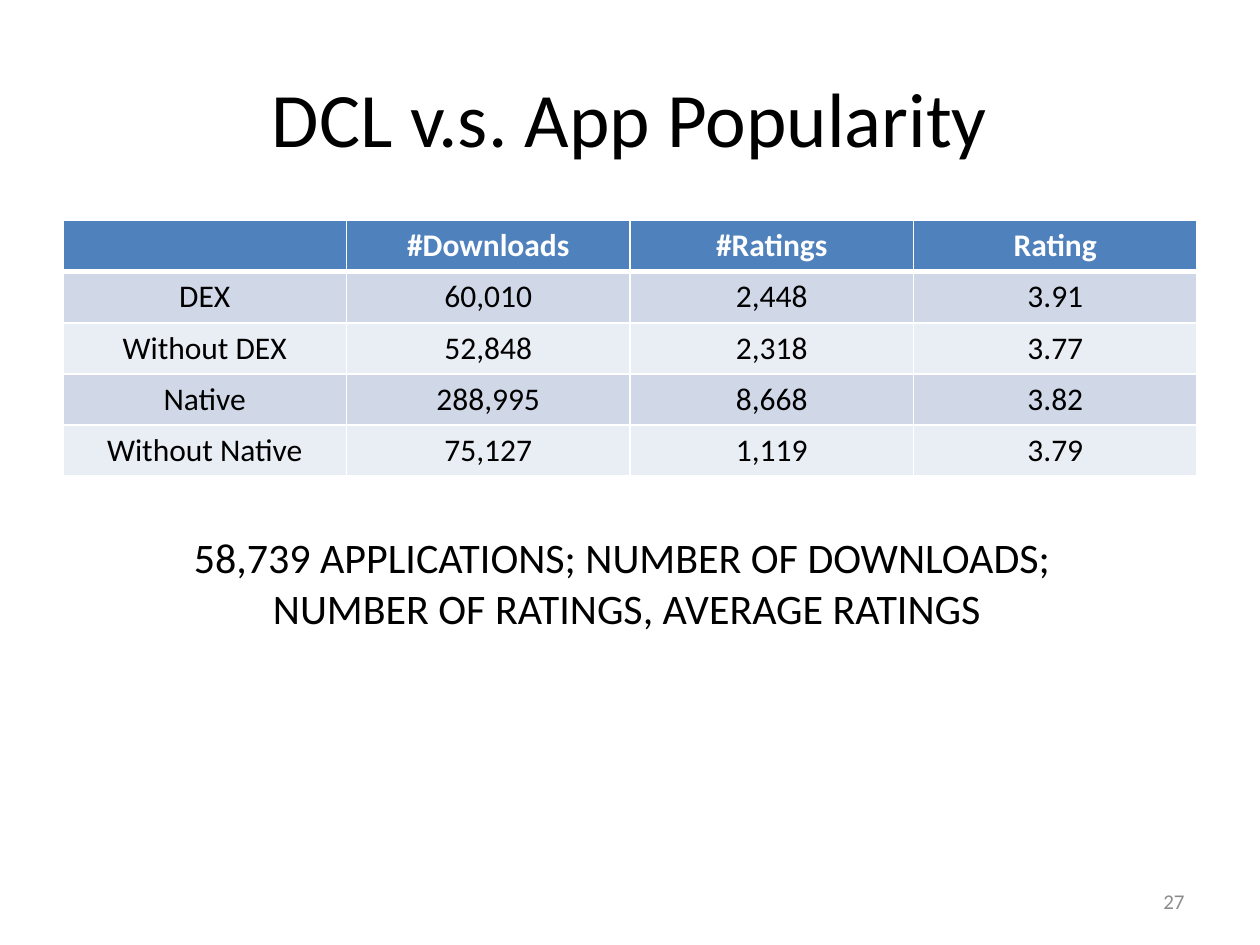
from dataclasses import dataclass

from lxml import etree
from pptx import Presentation
from pptx.dml.color import RGBColor
from pptx.enum.text import MSO_ANCHOR, PP_ALIGN
from pptx.oxml.ns import qn
from pptx.util import Inches, Pt

CENTER, RIGHT = PP_ALIGN.CENTER, PP_ALIGN.RIGHT
TOP, MIDDLE = MSO_ANCHOR.TOP, MSO_ANCHOR.MIDDLE
TITLE_ONLY = 5


@dataclass(frozen=True)
class Theme:
    font: str = "Calibri"
    text: str = "000000"
    white: str = "FFFFFF"
    muted: str = "8C8C8C"
    header: str = "4F81BD"
    bands: tuple = ("D0D8E8", "E9EDF4")
    title_size: int = 44
    note_size: int = 24
    table_size: int = 18
    number_size: int = 12
    border: int = 1
    header_border: int = 3


THEME = Theme()

POPULARITY = [
    ("", "#Downloads", "#Ratings", "Rating"),
    ("DEX", "60,010", "2,448", "3.91"),
    ("Without DEX", "52,848", "2,318", "3.77"),
    ("Native", "288,995", "8,668", "3.82"),
    ("Without Native", "75,127", "1,119", "3.79"),
]
NOTE = [
    "58,739 APPLICATIONS; NUMBER OF DOWNLOADS; ",
    "NUMBER OF RATINGS, AVERAGE RATINGS",
]


def write(tf, lines, size, color=THEME.text, align=CENTER, bold=False):
    for i, line in enumerate(lines):
        p = tf.paragraphs[0] if i == 0 else tf.add_paragraph()
        p.alignment = align
        r = p.add_run()
        r.text = line
        r.font.name = THEME.font
        r.font.size = Pt(size)
        r.font.bold = bold
        r.font.color.rgb = RGBColor.from_string(color)


def add_title(slide, text):
    title = slide.shapes.title
    title.left, title.top = Inches(0.5), Inches(0.3)
    title.width, title.height = Inches(9), Inches(1.25)
    title.text_frame.vertical_anchor = MIDDLE
    write(title.text_frame, [text], THEME.title_size)


def add_text(slide, box, lines, size, anchor=TOP, wrap=True, **style):
    tf = slide.shapes.add_textbox(*map(Inches, box)).text_frame
    tf.word_wrap = wrap
    tf.vertical_anchor = anchor
    write(tf, lines, size, **style)


def set_borders(cell, top, bottom):
    """Draw white borders; top and bottom are widths in points."""
    tc_pr = cell._tc.get_or_add_tcPr()
    widths = {"L": THEME.border, "R": THEME.border, "T": top, "B": bottom}
    for side, width in widths.items():
        ln = etree.SubElement(tc_pr, qn(f"a:ln{side}"), w=str(Pt(width)))
        fill = etree.SubElement(ln, qn("a:solidFill"))
        etree.SubElement(fill, qn("a:srgbClr"), val=THEME.white)


def fill_cell(cell, text, row):
    is_header = row == 0
    set_borders(
        cell,
        top=THEME.header_border if row == 1 else THEME.border,
        bottom=THEME.header_border if is_header else THEME.border,
    )
    color = THEME.header if is_header else THEME.bands[(row - 1) % 2]
    cell.fill.solid()
    cell.fill.fore_color.rgb = RGBColor.from_string(color)
    write(cell.text_frame, [text], THEME.table_size,
          color=THEME.white if is_header else THEME.text, bold=is_header)


def add_popularity_table(slide, rows):
    box = map(Inches, (0.5, 1.75, 9, 2.03))
    table = slide.shapes.add_table(len(rows), len(rows[0]), *box).table
    for i, values in enumerate(rows):
        for j, value in enumerate(values):
            fill_cell(table.cell(i, j), value, i)


def main():
    prs = Presentation()
    prs.slide_width, prs.slide_height = Inches(10), Inches(7.5)
    slide = prs.slides.add_slide(prs.slide_layouts[TITLE_ONLY])
    add_title(slide, "DCL v.s. App Popularity")
    add_popularity_table(slide, POPULARITY)
    add_text(slide, (7.17, 6.95, 2.33, 0.4), ["27"], THEME.number_size,
             anchor=MIDDLE, color=THEME.muted, align=RIGHT)
    add_text(slide, (1.42, 4.17, 7.11, 0.91), NOTE, THEME.note_size, wrap=False)
    prs.save("out.pptx")


if __name__ == "__main__":
    main()
